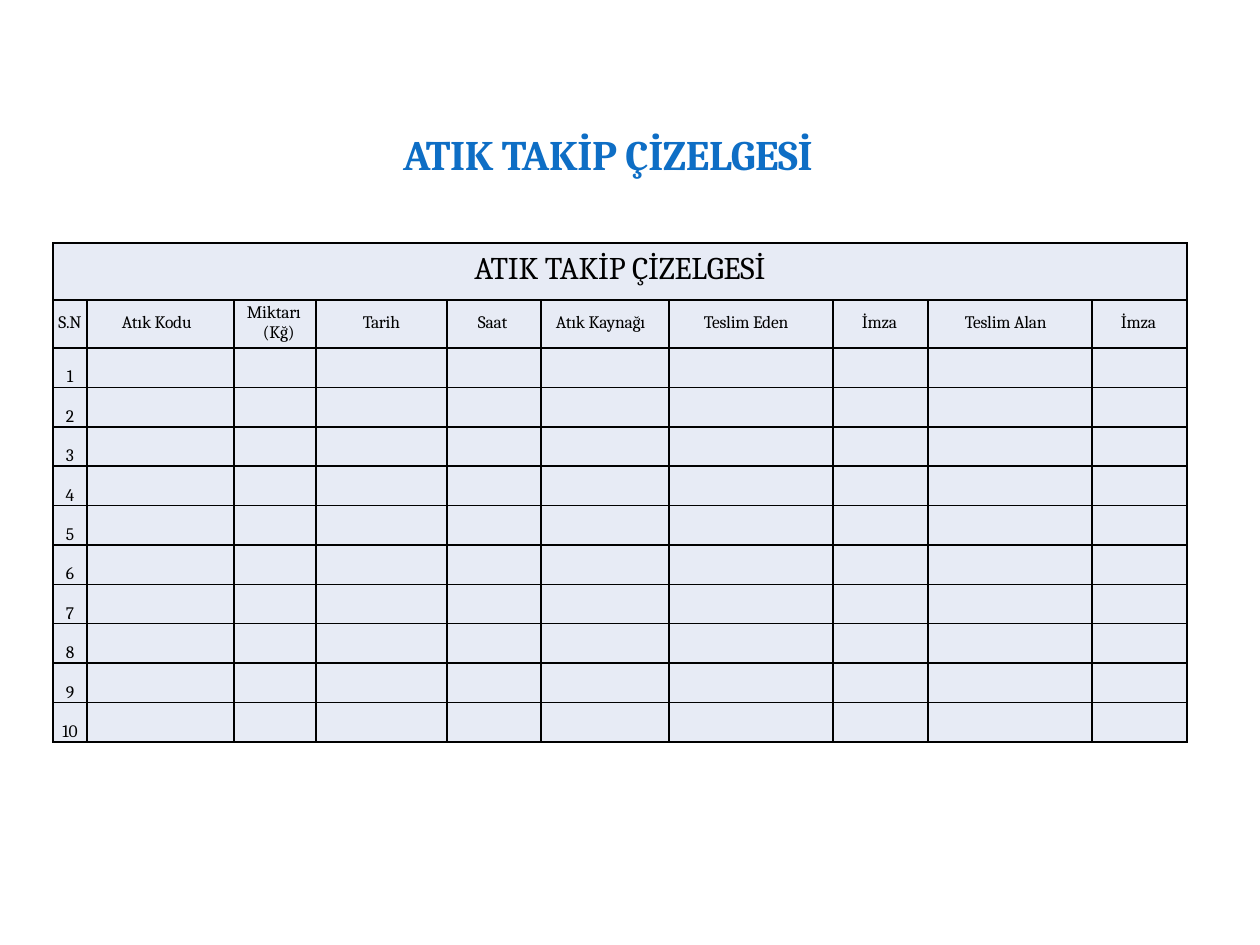
"""Build the waste tracking form: a title above a ruled table with ten numbered rows."""
from dataclasses import dataclass

from lxml.etree import SubElement
from pptx import Presentation
from pptx.dml.color import RGBColor as Rgb
from pptx.enum.text import MSO_ANCHOR as Anchor, MSO_AUTO_SIZE as Fit, PP_ALIGN as Align
from pptx.oxml.ns import qn
from pptx.util import Emu, Pt

SCALE = 914400 / 126


@dataclass(frozen=True)
class Theme:
    font: str = "Cambria"
    blue: str = "0E6EC5"
    ink: str = "000000"
    tint: str = "E7EBF5"
    rule: int = 1
    head: int = 24
    band: int = 18
    body: int = 10
    lead: float = 11.6


@dataclass(frozen=True)
class Column:
    label: str
    width: int
    left: int = 0
    hang: int = 0


THEME = Theme()
NAME = "ATIK TAKİP ÇİZELGESİ"
COLUMNS = [
    Column("S.N", 34),
    Column("Atık Kodu", 147, 35),
    Column("Miktarı (Kğ)", 82, 29, -16),
    Column("Tarih", 131),
    Column("Saat", 94, 31),
    Column("Atık Kaynağı", 128, 15),
    Column("Teslim Eden", 164, 35),
    Column("İmza", 95, 29),
    Column("Teslim Alan", 164, 37),
    Column("İmza", 95, 29),
]
COUNT = 10
BAND_H, LABEL_H, BODY_H = 57, 48, 394


def px(n: int) -> Emu:
    return Emu(round(n * SCALE))


def write(frame, text: str, size: int, color: str, bold: bool = False, track: int = 0):
    frame.text = text
    para = frame.paragraphs[0]
    for run in para.runs:
        font = run.font
        font.name, font.size, font.bold = THEME.font, Pt(size), bold
        font.color.rgb = Rgb.from_string(color)
        run._r.get_or_add_rPr().set("spc", str(track))
    return para


def inset(box, top: int = 0) -> None:
    box.margin_left = box.margin_right = box.margin_bottom = 0
    box.margin_top = px(top)


def style(cell) -> None:
    inset(cell)
    props = cell._tc.get_or_add_tcPr()
    for side in ("lnL", "lnR", "lnT", "lnB"):
        line = SubElement(props, qn(f"a:{side}"), w=str(Pt(THEME.rule)))
        fill = SubElement(line, qn("a:solidFill"))
        SubElement(fill, qn("a:srgbClr"), val=THEME.ink)
    cell.fill.solid()
    cell.fill.fore_color.rgb = Rgb.from_string(THEME.tint)
    para = cell.text_frame.paragraphs[0]
    SubElement(para._p, qn("a:endParaRPr"), sz=str(THEME.body * 100))


def label(cell, col: Column) -> None:
    para = write(cell.text_frame, col.label, THEME.body, THEME.ink, track=-10)
    inset(cell, 3 if col.hang else 13)
    if col.left:
        props = para._p.get_or_add_pPr()
        props.set("marL", str(px(col.left)))
        props.set("indent", str(px(col.hang)))
    else:
        para.alignment = Align.CENTER


def number(cell, n: int) -> None:
    para = write(cell.text_frame, str(n), THEME.body, THEME.ink)
    para.alignment = Align.CENTER
    para.line_spacing = Pt(THEME.lead)
    cell.vertical_anchor = Anchor.BOTTOM


def add_title(slide) -> None:
    title = slide.shapes.title
    title.left, title.top, title.width, title.height = map(px, (403, 127, 460, 54))
    frame = title.text_frame
    inset(frame, 1)
    frame.word_wrap = True
    frame.auto_size = Fit.SHAPE_TO_FIT_TEXT
    frame.vertical_anchor = Anchor.TOP
    para = write(frame, NAME, THEME.head, THEME.blue, True, -20)
    para.alignment = Align.LEFT


def add_form(slide) -> None:
    width = sum(col.width for col in COLUMNS)
    height = BAND_H + LABEL_H + BODY_H
    table = slide.shapes.add_table(
        COUNT + 2, len(COLUMNS), px(53), px(243), px(width), px(height)
    ).table
    table.first_row = table.horz_banding = False
    for slot, col in zip(table.columns, COLUMNS):
        slot.width = px(col.width)
    for row in table.rows:
        row.height = px(BODY_H) // COUNT
    table.rows[0].height, table.rows[1].height = px(BAND_H), px(LABEL_H)
    for cell in table.iter_cells():
        style(cell)

    band = table.cell(0, 0)
    band.merge(table.cell(0, len(COLUMNS) - 1))
    inset(band, 8)
    para = write(band.text_frame, NAME, THEME.band, THEME.ink, track=-10)
    para.alignment = Align.CENTER
    for i, col in enumerate(COLUMNS):
        label(table.cell(1, i), col)
    for n in range(1, COUNT + 1):
        number(table.cell(n + 1, 0), n)


def main() -> None:
    deck = Presentation()
    deck.slide_width, deck.slide_height = px(1260), px(945)
    slide = deck.slides.add_slide(deck.slide_layouts[5])
    add_title(slide)
    add_form(slide)
    deck.save("out.pptx")


if __name__ == "__main__":
    main()
